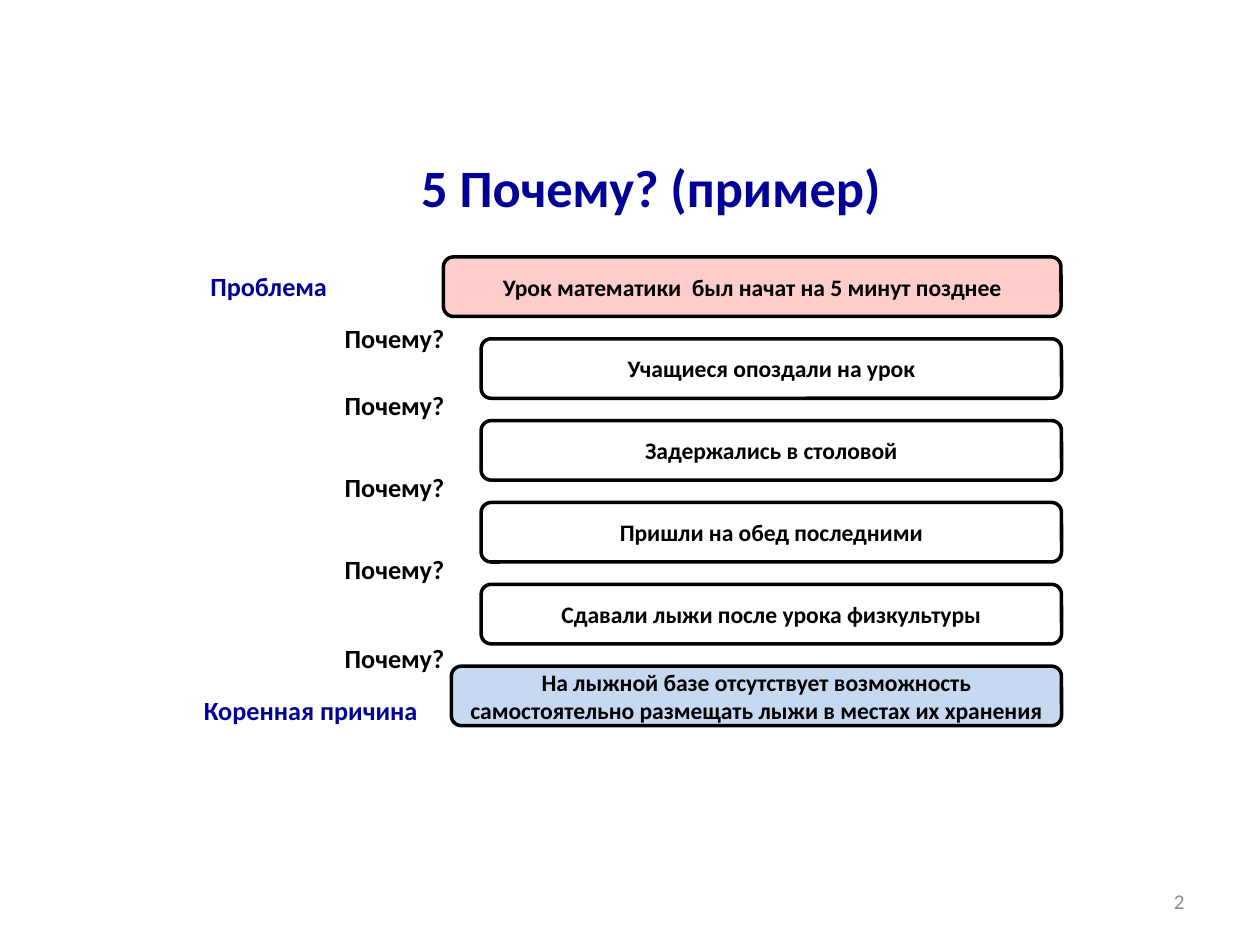
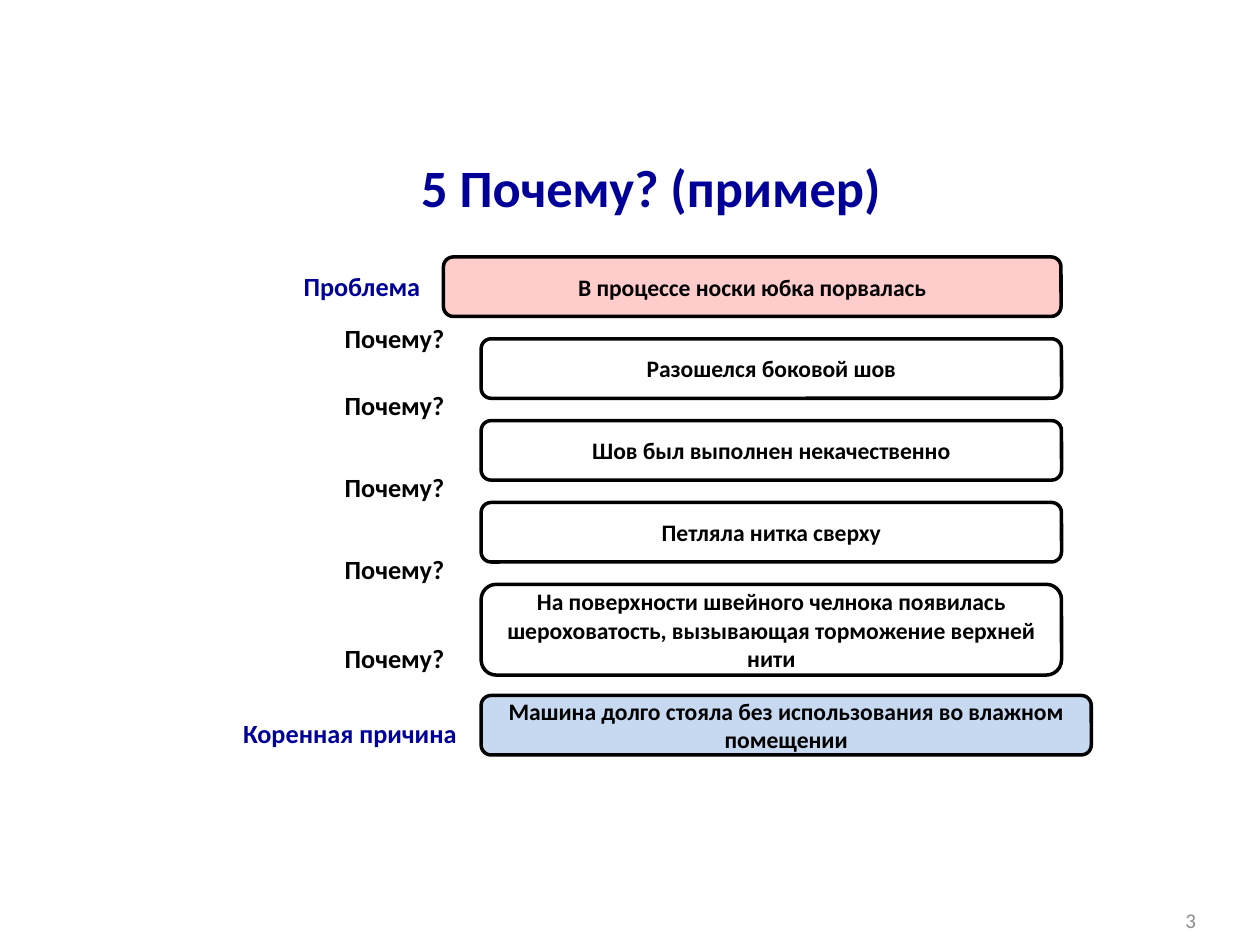
from pptx import Presentation
from pptx.dml.color import RGBColor
from pptx.enum.shapes import MSO_SHAPE as Shape
from pptx.enum.text import MSO_ANCHOR as Anchor, PP_ALIGN as Align
from pptx.util import Cm, Pt

# Shared style
FONT = "Calibri"
NAVY, BLACK, GRAY = "000099", "000000", "8C8C8C"
PINK, WHITE, BLUE = "FFCCCC", "FFFFFF", "C6D9F1"

# Shared layout, in centimetres
CHAIN_TOP, CHAIN_STEP, BOX_HEIGHT = 5.18, 1.65, 1.2
PROBLEM_LEFT, PROBLEM_WIDTH = 8.94, 12.45
ANSWER_LEFT, ANSWER_WIDTH = 9.7, 11.7
ROOT_WIDTH = 12.3
WHY_LEFT, WHY_TOPS = 6.7, (6.38, 7.72, 9.37, 11.02, 12.83)

# What differs between the two examples
EXAMPLES = [
    {
        "number": "2", "number_at": (18.21, 17.65),
        "problem": "Урок математики  был начат на 5 минут позднее",
        "problem_label_left": 3.99,
        "answers": ["Учащиеся опоздали на урок", "Задержались в столовой",
                    "Пришли на обед последними",
                    "Сдавали лыжи после урока физкультуры"],
        "last_answer_height": BOX_HEIGHT,
        "root": "На лыжной базе отсутствует возможность "
                "самостоятельно размещать лыжи в местах их хранения",
        "root_at": (9.1, 13.43), "root_label_at": (3.86, 13.87),
    },
    {
        "number": "3", "number_at": (18.44, 18.03),
        "problem": "В процессе носки юбка порвалась",
        "problem_label_left": 5.87,
        "answers": ["Разошелся боковой шов", "Шов был выполнен некачественно",
                    "Петляла нитка сверху",
                    "На поверхности швейного челнока появилась "
                    "шероховатость, вызывающая торможение верхней нити"],
        "last_answer_height": 1.83,
        "root": "Машина долго стояла без использования во влажном помещении",
        "root_at": (ANSWER_LEFT, 14.02), "root_label_at": (4.65, 14.33),
    },
]


def color(value):
    return RGBColor.from_string(value)


def write(shape, text, size, text_color, align, anchor, bold=True):
    frame = shape.text_frame
    frame.word_wrap = True
    frame.vertical_anchor = anchor
    paragraph = frame.paragraphs[0]
    paragraph.alignment = align
    run = paragraph.add_run()
    run.text = text
    run.font.name = FONT
    run.font.size = Pt(size)
    run.font.bold = bold
    run.font.color.rgb = color(text_color)


def add_text(slide, text, left, top, width, height, size, text_color,
             align=Align.LEFT, anchor=Anchor.TOP, bold=True):
    box = slide.shapes.add_textbox(Cm(left), Cm(top), Cm(width), Cm(height))
    write(box, text, size, text_color, align, anchor, bold)


def add_label(slide, text, left, top, width, text_color=NAVY):
    add_text(slide, text, left, top, width, 0.89, 15, text_color)


def add_box(slide, text, left, top, width, fill, height=BOX_HEIGHT):
    box = slide.shapes.add_shape(Shape.ROUNDED_RECTANGLE,
                                 Cm(left), Cm(top), Cm(width), Cm(height))
    box.shadow.inherit = False
    box.fill.solid()
    box.fill.fore_color.rgb = color(fill)
    box.line.color.rgb = color(BLACK)
    box.line.width = Pt(2)
    write(box, text, 13.5, BLACK, Align.CENTER, Anchor.MIDDLE)


def add_frame(slide, number, number_at):
    add_text(slide, number, *number_at, 5.92, 1.02, 12, GRAY,
             Align.RIGHT, Anchor.MIDDLE, bold=False)
    add_text(slide, "5 Почему? (пример)", 4.55, 2.79, 17.15, 1.93, 30, NAVY,
             Align.CENTER, Anchor.MIDDLE)


def add_example(presentation, example):
    slide = presentation.slides.add_slide(presentation.slide_layouts[6])
    add_frame(slide, example["number"], example["number_at"])

    # Problem
    add_box(slide, example["problem"], PROBLEM_LEFT, CHAIN_TOP,
            PROBLEM_WIDTH, PINK)
    add_label(slide, "Проблема", example["problem_label_left"], 5.33, 3.91)

    # Questions and answers
    for top in WHY_TOPS:
        add_label(slide, "Почему?", WHY_LEFT, top, 3, BLACK)
    answers = example["answers"]
    for step, answer in enumerate(answers, start=1):
        is_last = step == len(answers)
        height = example["last_answer_height"] if is_last else BOX_HEIGHT
        add_box(slide, answer, ANSWER_LEFT, CHAIN_TOP + step * CHAIN_STEP,
                ANSWER_WIDTH, WHITE, height)

    # Root cause
    add_box(slide, example["root"], *example["root_at"], ROOT_WIDTH, BLUE)
    add_label(slide, "Коренная причина", *example["root_label_at"], 4.95)


def main():
    presentation = Presentation()
    presentation.slide_width = Cm(25.4)
    presentation.slide_height = Cm(19.05)
    for example in EXAMPLES:
        add_example(presentation, example)
    presentation.save("out.pptx")


if __name__ == "__main__":
    main()
